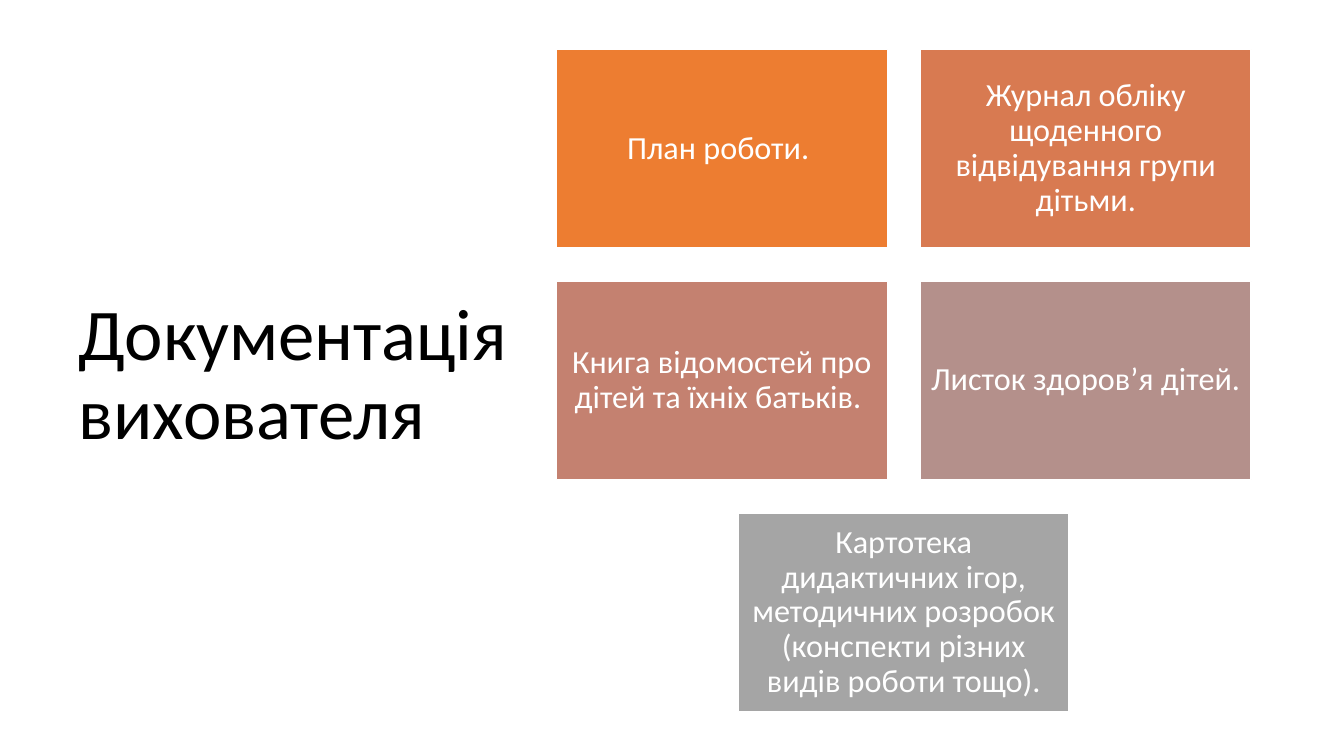
from pptx import Presentation
from pptx.dml.color import RGBColor
from pptx.enum.shapes import MSO_SHAPE
from pptx.enum.text import MSO_ANCHOR, PP_ALIGN
from pptx.util import Inches, Pt

COLORS = {
    "title": "000000",
    "white": "FFFFFF",
    "plan": "ED7D31",
    "journal": "D87A51",
    "book": "C48170",
    "health": "B4908B",
    "cards": "A5A5A5",
}
FONT = "Calibri"
CARD_W, CARD_H = 3.28, 1.97
GRID_LEFT, GRID_TOP = 5.52, 0.49
STEP_X, STEP_Y = 3.61, 2.3

# Column, row, colour and text; the last card is centred under the grid.
CARDS = [
    (0, 0, "plan", "План роботи. "),
    (1, 0, "journal", "Журнал обліку щоденного відвідування групи дітьми."),
    (0, 1, "book", "Книга відомостей про дітей та їхніх батьків. "),
    (1, 1, "health", "Листок здоров’я дітей. "),
    (0.5, 2, "cards", "Картотека дидактичних ігор, методичних розробок "
                      "(конспекти різних видів роботи тощо)."),
]


def rgb(name):
    return RGBColor.from_string(COLORS[name])


def set_text(s, text, size, color, align):
    tf = s.text_frame
    tf.word_wrap = True
    tf.vertical_anchor = MSO_ANCHOR.MIDDLE
    p = tf.paragraphs[0]
    p.text = text
    p.alignment = align
    p.line_spacing = 0.9
    p.font.name = FONT
    p.font.size = Pt(size)
    p.font.color.rgb = rgb(color)
    return tf


def add_title(slide, text):
    s = slide.shapes.add_textbox(Inches(0.68), Inches(0.69), Inches(4.6), Inches(6.09))
    set_text(s, text, 52, "title", PP_ALIGN.LEFT)


def add_card(slide, col, row, color, text):
    s = slide.shapes.add_shape(
        MSO_SHAPE.RECTANGLE,
        Inches(GRID_LEFT + col * STEP_X), Inches(GRID_TOP + row * STEP_Y),
        Inches(CARD_W), Inches(CARD_H))
    s.shadow.inherit = False
    s.fill.solid()
    s.fill.fore_color.rgb = rgb(color)
    s.line.color.rgb = rgb("white")
    s.line.width = Pt(1)
    tf = set_text(s, text, 23, "white", PP_ALIGN.CENTER)
    tf.margin_left = tf.margin_right = Inches(0.1)
    tf.margin_top = tf.margin_bottom = Inches(0.1)


def main():
    prs = Presentation()
    prs.slide_width, prs.slide_height = Inches(13.33), Inches(7.5)
    slide = prs.slides.add_slide(prs.slide_layouts[6])
    add_title(slide, "Документація вихователя")
    for card in CARDS:
        add_card(slide, *card)
    prs.save("out.pptx")


if __name__ == "__main__":
    main()
